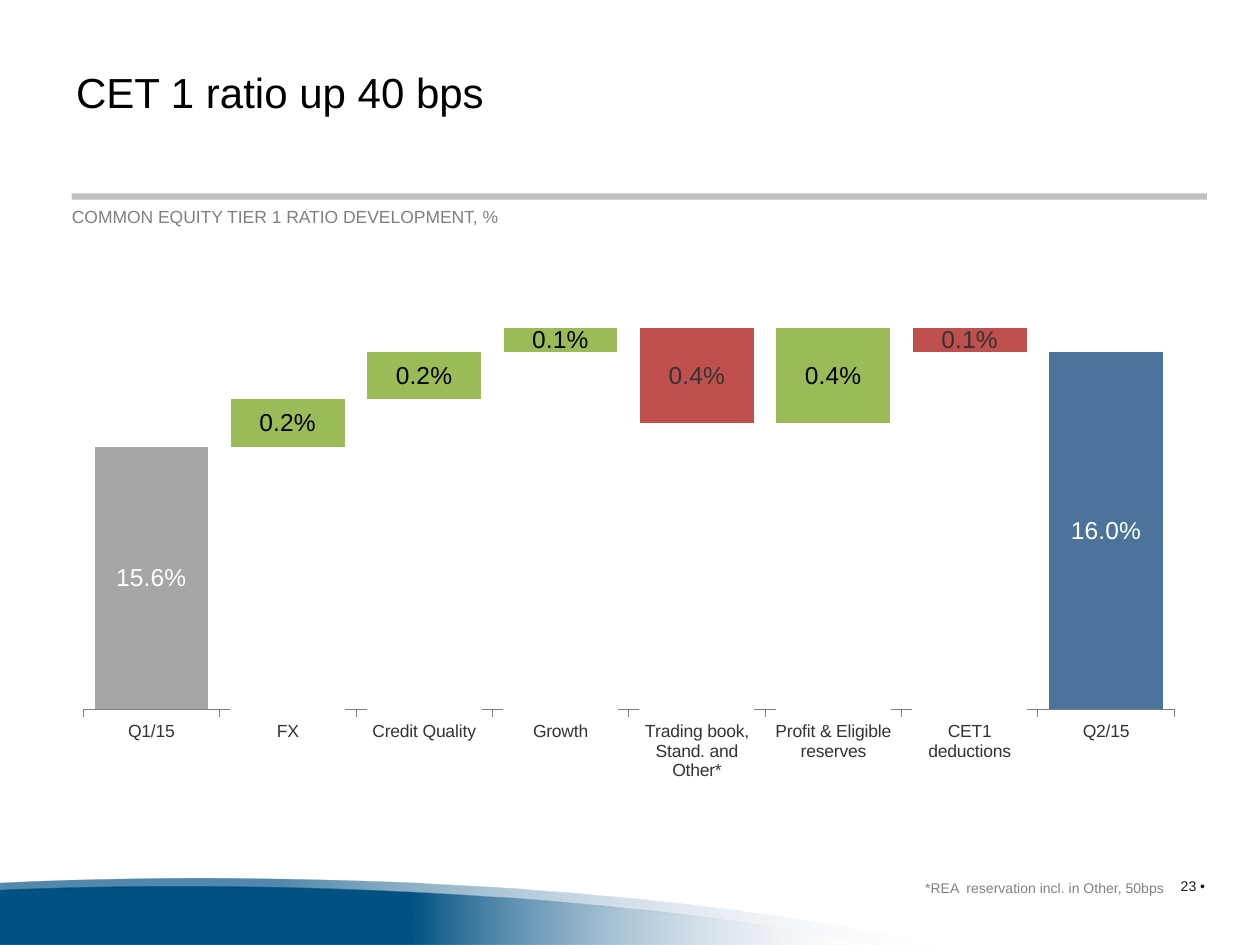
from lxml import etree
from pptx import Presentation
from pptx.chart.data import CategoryChartData
from pptx.dml.color import RGBColor
from pptx.enum.chart import XL_CHART_TYPE, XL_TICK_LABEL_POSITION, XL_TICK_MARK
from pptx.enum.shapes import MSO_SHAPE
from pptx.enum.text import MSO_ANCHOR, PP_ALIGN
from pptx.oxml import parse_xml
from pptx.oxml.ns import nsdecls, qn
from pptx.util import Pt

STACKED = XL_CHART_TYPE.COLUMN_STACKED
LABELS_LOW = XL_TICK_LABEL_POSITION.LOW
TICK_OUTSIDE, TICK_NONE = XL_TICK_MARK.OUTSIDE, XL_TICK_MARK.NONE
RECTANGLE = MSO_SHAPE.RECTANGLE
LEFT, RIGHT = PP_ALIGN.LEFT, PP_ALIGN.RIGHT
TOP, BOTTOM = MSO_ANCHOR.TOP, MSO_ANCHOR.BOTTOM

BLACK = RGBColor(0x00, 0x00, 0x00)
WHITE = RGBColor(0xFF, 0xFF, 0xFF)
INK = RGBColor(0x19, 0x19, 0x19)
DARK_GRAY = RGBColor(0x33, 0x33, 0x33)
GRAY = RGBColor(0x80, 0x80, 0x80)
RULE_GRAY = RGBColor(0xBF, 0xBF, 0xBF)
START_GRAY = RGBColor(0xA6, 0xA6, 0xA6)
END_BLUE = RGBColor(0x4C, 0x74, 0x9A)
GREEN = RGBColor(0x9B, 0xBB, 0x59)
RED = RGBColor(0xC0, 0x50, 0x4D)
WAVE_BLUE = RGBColor(0x00, 0x52, 0x84)
WAVE_PALE = RGBColor(0xE0, 0xE5, 0xF0)

FONT = "Arial"
LABEL_FORMAT = "0.0%;;;"
UNITS_PER_POINT = 100

TEXTS = [
    ("CET 1 ratio up 40 bps", (36.4, 34.5, 656.6, 36), 24, BLACK, LEFT, TOP, True, True),
    ("COMMON EQUITY TIER 1 RATIO DEVELOPMENT, %", (34, 114.2, 262.8, 19.4),
     10, GRAY, LEFT, TOP, False, True),
    ("23 •", (672.9, 501.5, 15.8, 9.4), 8, INK, RIGHT, TOP, True, False),
    ("*REA  reservation incl. in Other, 50bps", (396, 489.2, 276.5, 26.6),
     8, GRAY, RIGHT, BOTTOM, True, True),
]
RULE_BOX = (41, 110.5, 648.7, 3.6)
CHART_BOX = (2.7, 123.5, 690.5, 334)
PLOT_LAYOUT = {"x": 0.065, "y": 0.028, "w": 0.903, "h": 0.816}

CATEGORIES = ["Q1/15", "FX", "Credit Quality", "Growth", "Trading book, Stand. and Other*",
              "Profit & Eligible reserves", "CET1 deductions", "Q2/15"]
BASE = [None, 0.156, 0.158, 0.16, 0.157, 0.157, 0.16, None]
RISES = [0.156, 0.002, 0.002, 0.001, 0, 0.004, 0, 0.16]
FALLS = [None, 0, 0, 0, 0.004, 0, 0.001, None]
TOTAL_COLORS = {0: START_GRAY, 7: END_BLUE}

WAVES = [
    ([[(101.52, 506.88)], [(255.6, 506.88), (395.28, 519.12), (498.96, 540)],
      [(-1.44, 540)], [(-1.44, 509.04)],
      [(31.68, 507.6), (66.24, 506.88), (101.52, 506.88)]], 0.47, 100),
    ([[(114.48, 501.84)], [(279.36, 501.84), (428.4, 516.24), (534.24, 540)],
      [(498.96, 540)], [(395.28, 519.12), (255.6, 506.88), (101.52, 506.88)],
      [(66.24, 506.88), (31.68, 507.6), (-1.44, 509.04)], [(-1.44, 504.72)],
      [(36, 502.56), (74.88, 501.84), (114.48, 501.84)]], 0.30, 68),
]


def box_lengths(box):
    return [Pt(value) for value in box]


def add_outline(slide, segments):
    units = [[tuple(round(value * UNITS_PER_POINT) for value in point) for point in segment]
             for segment in segments]
    ends = [segment[-1] for segment in units]
    left, top = (min(values) for values in zip(*ends))
    builder = slide.shapes.build_freeform(*ends[0], scale=Pt(1) / UNITS_PER_POINT)
    builder.add_line_segments(ends[1:], close=True)
    shape = builder.convert_to_shape()
    lines = list(shape._element.spPr.iter(qn("a:lnTo")))
    for line, segment in zip(lines, units[1:]):
        if len(segment) == 3:
            curve = etree.Element(qn("a:cubicBezTo"))
            for x, y in segment:
                etree.SubElement(curve, qn("a:pt"), x=str(x - left), y=str(y - top))
            line.getparent().replace(line, curve)
    return shape


def add_wave(slide, segments, start_position, start_opacity):
    shape = add_outline(slide, segments)
    shape.shadow.inherit = False
    shape.line.fill.background()
    shape.fill.gradient()
    shape.fill.gradient_angle = 0
    stops = zip(shape.fill.gradient_stops, (start_position, 1), (WAVE_BLUE, WAVE_PALE))
    for stop, position, color in stops:
        stop.position = position
        stop.color.rgb = color
    color_elements = shape._element.spPr.iter(qn("a:srgbClr"))
    for color_element, opacity in zip(color_elements, (start_opacity, 0)):
        etree.SubElement(color_element, qn("a:alpha"), val=str(opacity * 1000))


def add_text(slide, text, box, size, color, alignment, anchor, wrap, inset):
    frame = slide.shapes.add_textbox(*box_lengths(box)).text_frame
    frame.word_wrap = wrap
    frame.vertical_anchor = anchor
    if not inset:
        frame.margin_left = frame.margin_right = frame.margin_top = frame.margin_bottom = 0
    paragraph = frame.paragraphs[0]
    paragraph.alignment = alignment
    run = paragraph.add_run()
    run.text = text
    style_font(run.font, size, color)


def style_font(font, size, color):
    font.name = FONT
    font.size = Pt(size)
    font.color.rgb = color


def fill_solid(target, color):
    target.fill.solid()
    target.fill.fore_color.rgb = color


def style_labels(series, color):
    labels = series.data_labels
    labels.show_value = True
    labels.number_format = LABEL_FORMAT
    labels.number_format_is_linked = False
    style_font(labels.font, 14, color)


def add_waterfall(slide):
    data = CategoryChartData(number_format=LABEL_FORMAT)
    data.categories = CATEGORIES
    for name, values in (("Series 1", BASE), ("Series 2", RISES), ("Series 3", FALLS)):
        data.add_series(name, values)
    chart = slide.shapes.add_chart(STACKED, *box_lengths(CHART_BOX), data).chart
    chart.has_legend = False
    chart.has_title = False
    style_font(chart.font, 10, DARK_GRAY)

    plot = chart.plots[0]
    plot.gap_width = 20
    plot.overlap = 100
    plot.vary_by_categories = False
    base, rises, falls = plot.series
    base.format.fill.background()
    base.format.line.color.rgb = WHITE
    base.format.line.width = Pt(0.75)
    for series, color, label_color in ((rises, GREEN, BLACK), (falls, RED, DARK_GRAY)):
        fill_solid(series.format, color)
        series.invert_if_negative = False
        style_labels(series, label_color)
    for index, color in TOTAL_COLORS.items():
        point = rises.points[index]
        fill_solid(point.format, color)
        style_font(point.data_label.font, 14, WHITE)

    value_axis = chart.value_axis
    value_axis.minimum_scale = 0.145
    value_axis.maximum_scale = 0.165
    value_axis.has_major_gridlines = False
    value_axis.visible = False
    category_axis = chart.category_axis
    category_axis.major_tick_mark = TICK_OUTSIDE
    category_axis.minor_tick_mark = TICK_NONE
    category_axis.tick_label_position = LABELS_LOW
    category_axis.format.line.color.rgb = GRAY
    category_axis.format.line.width = Pt(0.5)
    style_font(category_axis.tick_labels.font, 10, DARK_GRAY)

    plot_area = chart._chartSpace.chart.plotArea
    for layout in plot_area.findall(qn("c:layout")):
        plot_area.remove(layout)
    modes = '<c:layoutTarget val="inner"/><c:xMode val="edge"/><c:yMode val="edge"/>'
    lengths = "".join(f'<c:{key} val="{value}"/>' for key, value in PLOT_LAYOUT.items())
    plot_area.insert(0, parse_xml(f'<c:layout {nsdecls("c")}><c:manualLayout>{modes}{lengths}'
                                  '</c:manualLayout></c:layout>'))


def main():
    presentation = Presentation()
    presentation.slide_width, presentation.slide_height = Pt(720), Pt(540)
    slide = presentation.slides.add_slide(presentation.slide_layouts[6])
    for wave in WAVES:
        add_wave(slide, *wave)
    for text in TEXTS:
        add_text(slide, *text)
    rule = slide.shapes.add_shape(RECTANGLE, *box_lengths(RULE_BOX))
    rule.shadow.inherit = False
    rule.line.fill.background()
    fill_solid(rule, RULE_GRAY)
    add_waterfall(slide)
    presentation.save("out.pptx")


if __name__ == "__main__":
    main()
